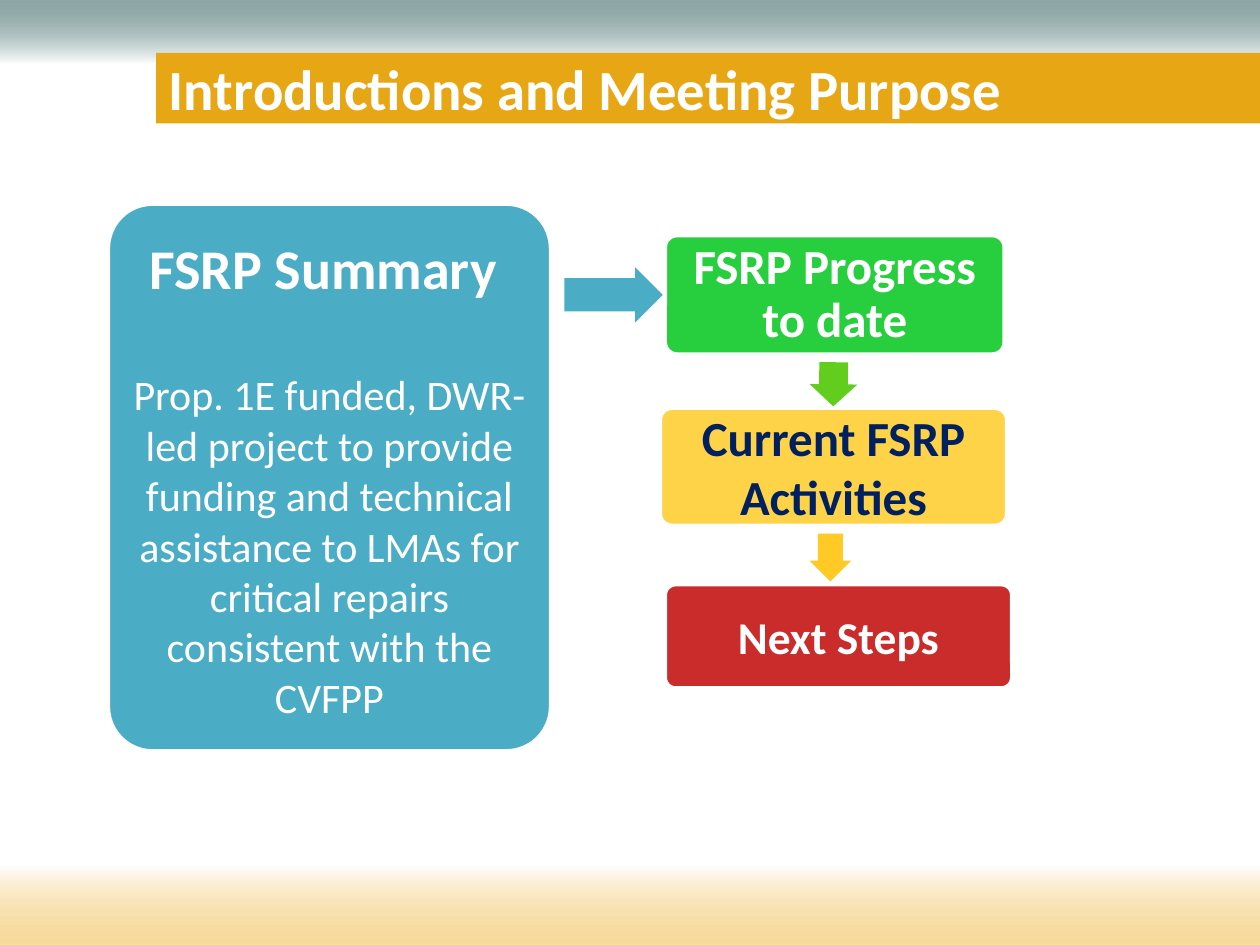
import pptx
import pptx.util
import pptx.dml.color
import pptx.enum.shapes
import pptx.enum.text
import pptx.oxml.ns
from dataclasses import dataclass
from lxml import etree

Inches, Pt = pptx.util.Inches, pptx.util.Pt
RGB = pptx.dml.color.RGBColor.from_string
SHAPE = pptx.enum.shapes.MSO_SHAPE
ALIGN = pptx.enum.text.PP_ALIGN
MIDDLE = pptx.enum.text.MSO_ANCHOR.MIDDLE


@dataclass(frozen=True)
class Theme:
    font: str = "Calibri"
    white: str = "FFFFFF"
    navy: str = "002060"
    teal: str = "215352"
    sand: str = "EEB840"
    banner: str = "E7A614"
    blue: str = "4BACC6"
    green: str = "27CF3F"
    lime: str = "62CD1C"
    yellow: str = "FFD347"
    amber: str = "FFC000"
    red: str = "C00000"
    title: float = 32.4
    heading: int = 32
    step: int = 28
    last_step: int = 26
    body: int = 24


theme = Theme()
CORNER = 0.1  # rounding of the boxes
CORNER_INSET = CORNER * 0.29  # share of the short side taken by the corner


def write(paragraph, text, size, color=theme.white, bold=True,
          align=ALIGN.CENTER, line_spacing=None, space_before=None):
    paragraph.text = text
    paragraph.alignment = align
    paragraph.line_spacing = line_spacing
    paragraph.space_before = space_before
    font = paragraph.font
    font.name, font.size, font.bold = theme.font, Pt(size), bold
    font.color.rgb = RGB(color)


def draw(kind, box, color, alpha=100, adjust=(), outline=False, fade_angle=None):
    shape = slide.shapes.add_shape(kind, *map(Inches, box))
    shape.shadow.inherit = False
    for i, value in enumerate(adjust):
        shape.adjustments[i] = value
    if fade_angle is None:
        shape.fill.solid()
        shape.fill.fore_color.rgb = RGB(color)
    else:
        shape.fill.gradient()
        shape.fill.gradient_angle = fade_angle
        start, end = shape.fill.gradient_stops
        start.color.rgb, start.position = RGB(color), 0
        end.color.rgb, end.position = RGB(theme.white), 0.52
    if alpha < 100:
        first_color = next(shape._element.spPr.iter(pptx.oxml.ns.qn("a:srgbClr")))
        etree.SubElement(first_color, pptx.oxml.ns.qn("a:alpha"), val=str(alpha * 1000))
    if outline:
        shape.line.color.rgb = RGB(theme.white)
        shape.line.width = Pt(2)
    else:
        shape.line.fill.background()
    return shape


deck = pptx.Presentation()
deck.slide_width, deck.slide_height = Inches(10), Inches(7.5)
slide = deck.slides.add_slide(deck.slide_layouts[5])

# Fading bands at the top and bottom, and the title banner
draw(SHAPE.RECTANGLE, (0, 0, 10, 0.98), theme.teal, alpha=51, fade_angle=270)
draw(SHAPE.RECTANGLE, (1.24, 0.42, 8.76, 0.56), theme.banner)
draw(SHAPE.RECTANGLE, (0, 6.27, 10, 1.23), theme.sand, alpha=51, fade_angle=90)

# Title, brought in front of the banner
title = slide.shapes.title
title.left, title.top, title.width, title.height = map(Inches, (1.24, 0.41, 8.76, 0.58))
title.text_frame.vertical_anchor = MIDDLE
write(title.text_frame.paragraphs[0], "Introductions and Meeting Purpose",
      theme.title, align=ALIGN.LEFT)
slide.shapes._spTree.append(title._element)

# Summary and step boxes: place, fill, opacity, inset, paragraphs
boxes = [
    ((0.86, 1.62, 3.51, 4.34), theme.blue, 100, 0.13, [
        dict(text="FSRP Summary ", size=theme.heading),
        dict(text="Prop. 1E funded, DWR-led project to provide funding and "
                  "technical assistance to LMAs for critical repairs "
                  "consistent with the CVFPP",
             size=theme.body, bold=False, space_before=Pt(39))]),
    ((5.28, 1.87, 2.69, 0.94), theme.green, 100, 0.12, [
        dict(text="FSRP Progress to date", size=theme.step, line_spacing=0.9)]),
    ((5.24, 3.24, 2.75, 0.93), theme.yellow, 100, 0.12, [
        dict(text="Current FSRP Activities", size=theme.step, color=theme.navy)]),
    ((5.28, 4.64, 2.75, 0.82), theme.red, 83, 0.11, [
        dict(text="Next Steps", size=theme.last_step)]),
]
for place, color, alpha, inset, paragraphs in boxes:
    box = draw(SHAPE.ROUNDED_RECTANGLE, place, color, alpha, [CORNER], outline=True)
    frame = box.text_frame
    frame.word_wrap = True
    frame.vertical_anchor = MIDDLE
    margin = Inches(inset - CORNER_INSET * min(place[2:]))
    frame.margin_left = frame.margin_right = margin
    frame.margin_top = frame.margin_bottom = margin
    for i, content in enumerate(paragraphs):
        write(frame.add_paragraph() if i else frame.paragraphs[0], **content)

# Arrows from one box to the next
arrows = [
    ((4.48, 2.12, 0.78, 0.44), theme.blue, 100, 0),
    ((6.44, 2.86, 0.35, 0.38), theme.lime, 100, 90.7),
    ((6.4, 4.26, 0.38, 0.33), theme.amber, 85, 90),
]
for place, color, alpha, turn in arrows:
    draw(SHAPE.RIGHT_ARROW, place, color, alpha, [0.6, 0.5]).rotation = turn

deck.save("out.pptx")
